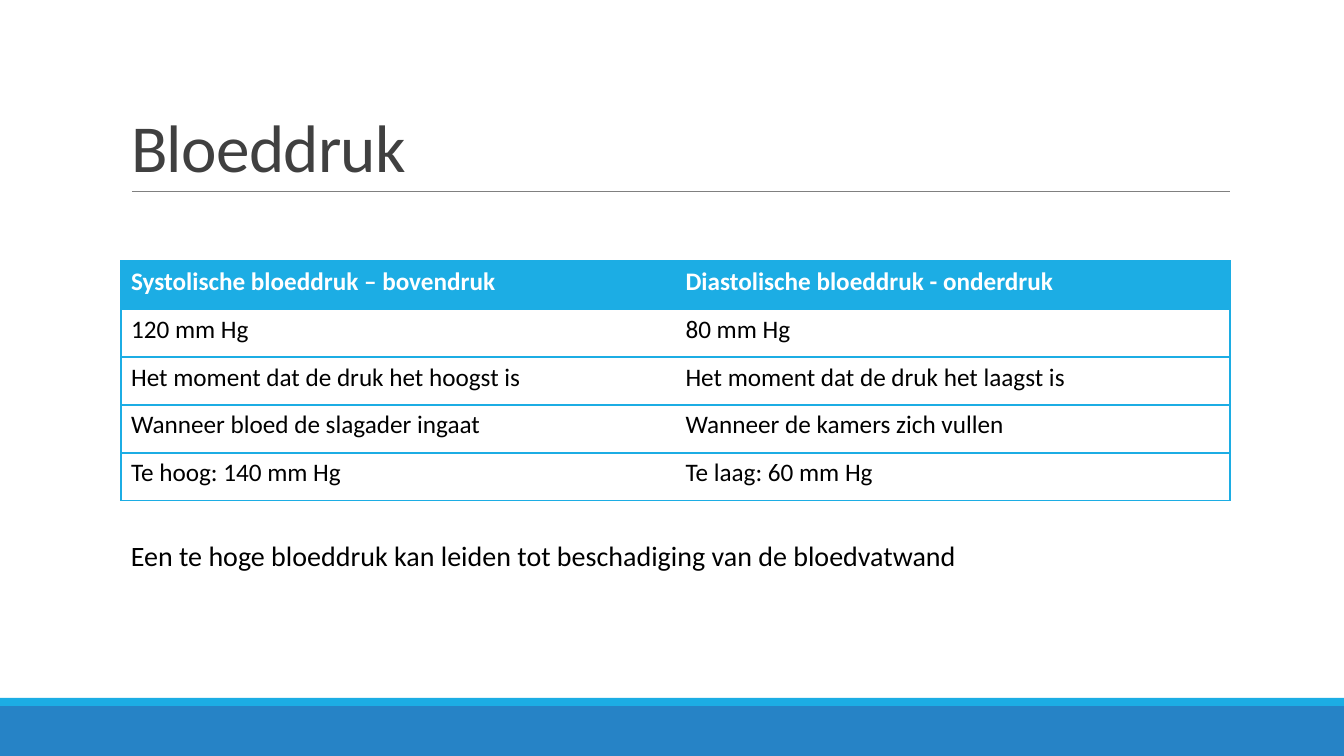
from lxml.etree import SubElement
from pptx import Presentation
from pptx.dml.color import RGBColor
from pptx.enum.shapes import MSO_CONNECTOR, MSO_SHAPE
from pptx.enum.text import MSO_ANCHOR, MSO_AUTO_SIZE, PP_ALIGN
from pptx.oxml.ns import qn
from pptx.util import Pt

TITLE = "Bloeddruk"
ROWS = [
    ("Systolische bloeddruk – bovendruk", "Diastolische bloeddruk - onderdruk"),
    ("120 mm Hg", "80 mm Hg"),
    ("Het moment dat de druk het hoogst is", "Het moment dat de druk het laagst is"),
    ("Wanneer bloed de slagader ingaat", "Wanneer de kamers zich vullen"),
    ("Te hoog: 140 mm Hg", "Te laag: 60 mm Hg"),
]
NOTE = "Een te hoge bloeddruk kan leiden tot beschadiging van de bloedvatwand"

FONT = "Calibri"
CYAN = RGBColor(0x1C, 0xAD, 0xE4)
BLUE = RGBColor(0x26, 0x83, 0xC6)
GRAY = RGBColor(0x80, 0x80, 0x80)
DARK = RGBColor(0x40, 0x40, 0x40)
BLACK = RGBColor(0, 0, 0)
WHITE = RGBColor(0xFF, 0xFF, 0xFF)

WIDTH, HEIGHT = 1344, 756
LEFT, CONTENT_W = 121, 1109
ROW_H = 48
BANDS = [(706, 50, BLUE), (698, 8, CYAN)]


def px(n):
    return round(n * 914400 / 100.8)


def box(*lengths):
    return [px(n) for n in lengths]


def style(p, size, color, bold=False):
    p.font.name = FONT
    p.font.size = Pt(size)
    p.font.color.rgb = color
    p.font.bold = bold


def add_border(cell, side, visible):
    ln = SubElement(cell._tc.get_or_add_tcPr(), qn(f"a:ln{side}"), w=str(Pt(1)))
    if visible:
        fill = SubElement(ln, qn("a:solidFill"))
        SubElement(fill, qn("a:srgbClr"), val=str(CYAN))
    else:
        SubElement(ln, qn("a:noFill"))


def add_bands(s):
    for top, height, color in BANDS:
        band = s.shapes.add_shape(MSO_SHAPE.RECTANGLE, *box(0, top, WIDTH, height))
        band.shadow.inherit = False
        band.fill.solid()
        band.fill.fore_color.rgb = color
        band.line.fill.background()


def add_rule(s):
    rule = s.shapes.add_connector(MSO_CONNECTOR.STRAIGHT, *box(132, 191, 1230, 191))
    rule.line.color.rgb = GRAY
    rule.line.width = Pt(0.5)
    SubElement(rule._element.spPr, qn("a:effectLst"))


def fill_title(s):
    title = s.shapes.title
    title.left, title.top, title.width, title.height = box(LEFT, 31, CONTENT_W, 160)
    tf = title.text_frame
    tf.text = TITLE
    tf.vertical_anchor = MSO_ANCHOR.BOTTOM
    tf.auto_size = MSO_AUTO_SIZE.NONE
    p = tf.paragraphs[0]
    p.alignment = PP_ALIGN.LEFT
    p.line_spacing = 0.85
    style(p, 48, DARK)
    p.runs[0].font._element.set("spc", "-50")


def add_pressure_table(s):
    cols = len(ROWS[0])
    frame = s.shapes.add_table(
        len(ROWS), cols, *box(LEFT, 261, CONTENT_W, ROW_H * len(ROWS)))
    table = frame.table
    table.horz_banding = False
    for row, texts in enumerate(ROWS):
        table.rows[row].height = px(ROW_H)
        for col, text in enumerate(texts):
            cell = table.cell(row, col)
            cell.text = text
            header = row == 0
            style(cell.text_frame.paragraphs[0], 18, WHITE if header else BLACK, header)
            add_border(cell, "L", col == 0)
            add_border(cell, "R", col == cols - 1)
            add_border(cell, "T", True)
            add_border(cell, "B", True)
            if header:
                cell.fill.solid()
                cell.fill.fore_color.rgb = CYAN
            else:
                cell.fill.background()


def add_note(s):
    tf = s.shapes.add_textbox(*box(LEFT, 534, CONTENT_W, 44)).text_frame
    tf.word_wrap = True
    tf.auto_size = MSO_AUTO_SIZE.SHAPE_TO_FIT_TEXT
    tf.text = NOTE
    style(tf.paragraphs[0], 20, BLACK)


def main():
    prs = Presentation()
    prs.slide_width, prs.slide_height = box(WIDTH, HEIGHT)
    s = prs.slides.add_slide(prs.slide_layouts[5])
    add_bands(s)
    add_rule(s)
    fill_title(s)
    add_pressure_table(s)
    add_note(s)
    prs.save("out.pptx")


if __name__ == "__main__":
    main()
